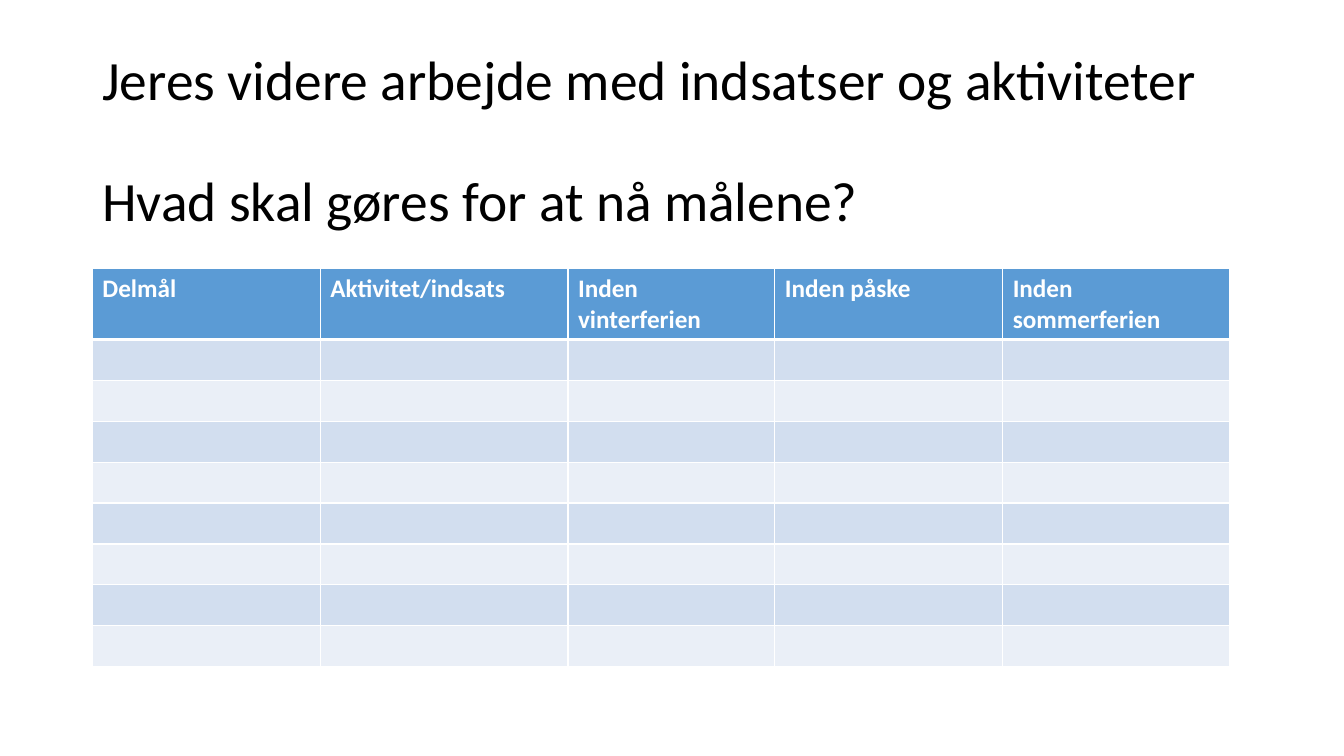
from lxml.etree import SubElement
from pptx import Presentation
from pptx.dml.color import RGBColor
from pptx.enum.text import MSO_ANCHOR
from pptx.oxml.ns import qn
from pptx.util import Emu, Pt

PX = 9525  # 96 px to the inch
FONT = "Calibri"
COLORS = {
    "text": "000000",
    "white": "FFFFFF",
    "header": "5B9BD5",
    "band_dark": "D2DEEF",
    "band_light": "EAEFF7",
}

TITLE_LINES = [
    "Jeres videre arbejde med indsatser og aktiviteter",
    "Hvad skal gøres for at nå målene?",
]
HEADINGS = [
    "Delmål",
    "Aktivitet/indsats",
    "Inden vinterferien",
    "Inden påske",
    "Inden sommerferien",
]
COLUMN_WIDTHS = [217, 236, 197, 217, 216]
HEADER_HEIGHT = 67
ROW_HEIGHT = 39
EMPTY_ROWS = 8


def px(value):
    return Emu(value * PX)


def color(name):
    return RGBColor.from_string(COLORS[name])


def style_font(paragraph, size, color_name, bold=False):
    font = paragraph.font
    font.name = FONT
    font.size = Pt(size)
    font.bold = bold
    font.color.rgb = color(color_name)


def add_title(slide, left, top, width, height):
    text_box = slide.shapes.add_textbox(px(left), px(top), px(width), px(height))
    frame = text_box.text_frame
    frame.word_wrap = True
    frame.vertical_anchor = MSO_ANCHOR.TOP
    frame.margin_top = px(12)
    for index, line in enumerate(TITLE_LINES):
        paragraph = frame.add_paragraph() if index else frame.paragraphs[0]
        paragraph.text = line
        paragraph.line_spacing = 0.9
        if index:
            paragraph.space_before = Pt(43.5)
        style_font(paragraph, 39.6, "text")


def set_borders(cell, top_width, bottom_width):
    properties = cell._tc.get_or_add_tcPr()
    widths = {"a:lnL": 1, "a:lnR": 1, "a:lnT": top_width, "a:lnB": bottom_width}
    for tag, width in widths.items():
        line = SubElement(properties, qn(tag), w=str(Pt(width)))
        fill = SubElement(line, qn("a:solidFill"))
        SubElement(fill, qn("a:srgbClr"), val=COLORS["white"])


def style_cell(cell, row_index):
    # A thick line separates the header from the banded rows
    set_borders(cell, 3 if row_index == 1 else 1, 3 if row_index == 0 else 1)
    if row_index == 0:
        fill_name = "header"
    else:
        fill_name = "band_dark" if row_index % 2 else "band_light"
    cell.fill.solid()
    cell.fill.fore_color.rgb = color(fill_name)
    is_header = row_index == 0
    style_font(cell.text_frame.paragraphs[0], 18,
               "white" if is_header else "text", is_header)


def add_plan_table(slide, left, top):
    row_heights = [HEADER_HEIGHT] + [ROW_HEIGHT] * EMPTY_ROWS
    table = slide.shapes.add_table(
        len(row_heights), len(HEADINGS), px(left), px(top),
        px(sum(COLUMN_WIDTHS)), px(sum(row_heights)),
    ).table
    for column, width in zip(table.columns, COLUMN_WIDTHS):
        column.width = px(width)
    for heading, cell in zip(HEADINGS, table.rows[0].cells):
        cell.text = heading
    for row_index, (row, height) in enumerate(zip(table.rows, row_heights)):
        row.height = px(height)
        for cell in row.cells:
            style_cell(cell, row_index)


def main():
    presentation = Presentation()
    presentation.slide_width = px(1280)
    presentation.slide_height = px(720)
    slide = presentation.slides.add_slide(presentation.slide_layouts[6])

    # Title with its question
    add_title(slide, 88, 38, 1104, 139)

    # Planning table
    add_plan_table(slide, 88, 256)

    presentation.save("out.pptx")


if __name__ == "__main__":
    main()
